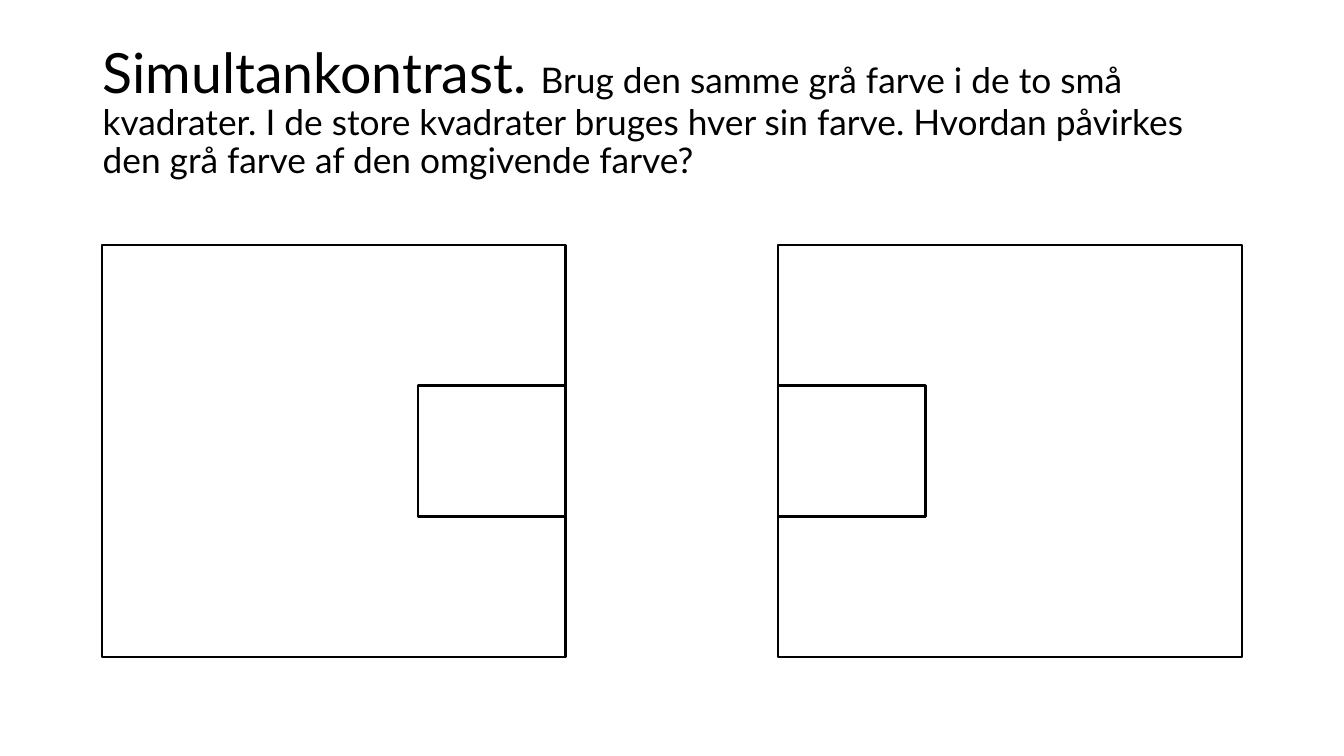
from pptx import Presentation
from pptx.dml.color import RGBColor
from pptx.enum.shapes import MSO_SHAPE
from pptx.enum.text import MSO_ANCHOR
from pptx.util import Inches, Pt

RECT = MSO_SHAPE.RECTANGLE
MIDDLE = MSO_ANCHOR.MIDDLE
COLORS = {"ink": "000000"}


class Deck:
    def __init__(self):
        self.prs = Presentation()
        self.prs.slide_width = Inches(13.33)
        self.prs.slide_height = Inches(7.5)
        self.slide = self.prs.slides.add_slide(self.prs.slide_layouts[6])
        self.face = "Lato"
        self.ink = RGBColor.from_string(COLORS["ink"])

    def text(self, left, top, width, height, runs):
        box = self.slide.shapes.add_textbox(
            Inches(left), Inches(top), Inches(width), Inches(height))
        frame = box.text_frame
        for key, value in {"word_wrap": True, "vertical_anchor": MIDDLE}.items():
            setattr(frame, key, value)
        para = frame.paragraphs[0]
        para.line_spacing = 0.9
        for words, size in runs:
            run = para.add_run()
            run.text = words
            for key, value in {"name": self.face, "size": Pt(size)}.items():
                setattr(run.font, key, value)
            run.font.color.rgb = self.ink

    def rect(self, left, top, width, height):
        shape = self.slide.shapes.add_shape(
            RECT, Inches(left), Inches(top), Inches(width), Inches(height))
        shape.shadow.inherit = False
        shape.fill.background()
        shape.line.color.rgb = self.ink
        shape.line.width = Pt(1.5)

    def save(self):
        self.prs.save("out.pptx")


def main():
    deck = Deck()
    deck.text(0.92, 0.4, 11.5, 1.45, [
        ("Simultankontrast. ", 39.6),
        ("Brug den samme grå farve i de to små kvadrater. "
         "I de store kvadrater bruges hver sin farve. "
         "Hvordan påvirkes den grå farve af den omgivende farve?", 25.2),
    ])
    top, wide, high = 2.43, 4.6, 4.09
    small, low = 1.46, 1.3
    inset = top + (high - low) / 2
    lefts = 1.01, 7.72
    for left in lefts:
        deck.rect(left, top, wide, high)
    for left in (lefts[0] + wide - small, lefts[1]):
        deck.rect(left, inset, small, low)
    deck.save()


if __name__ == "__main__":
    main()
